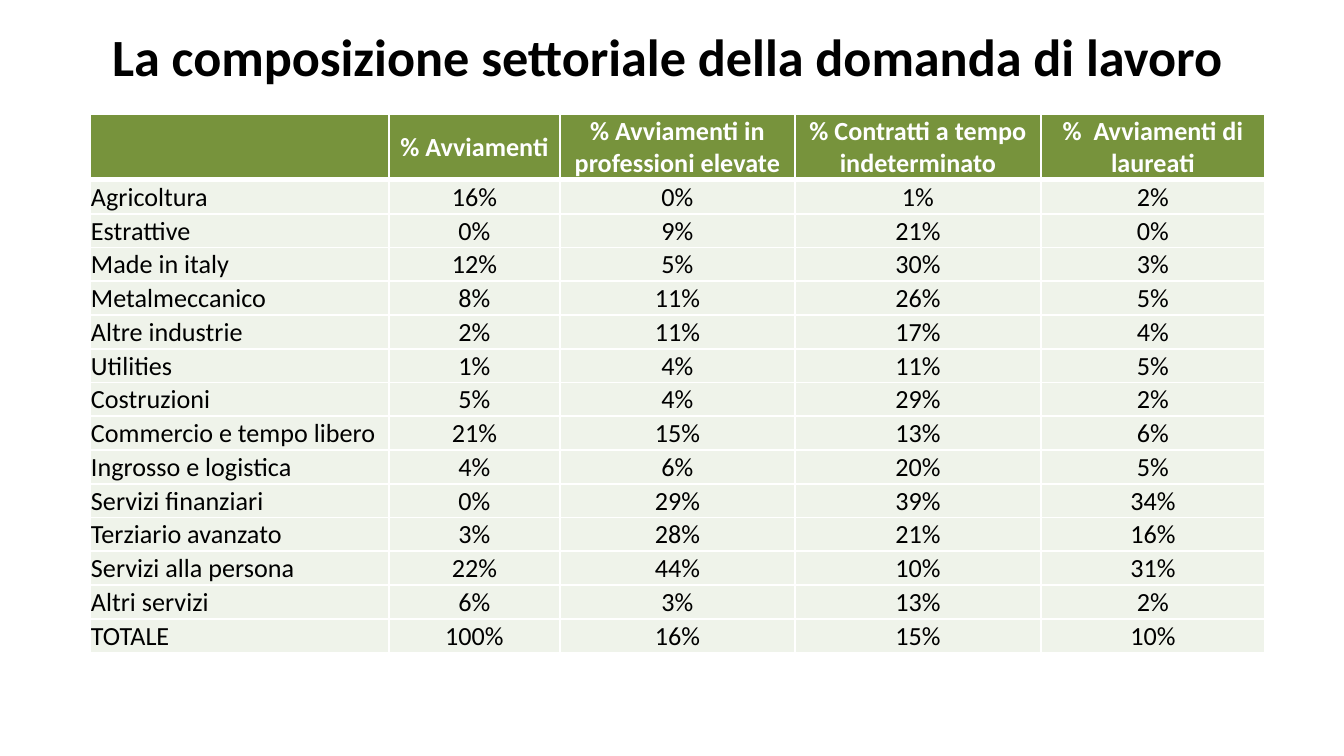
"""Build the slide on the sector composition of labour demand."""
from lxml import etree
from pptx import Presentation
from pptx.dml.color import RGBColor
from pptx.enum.text import MSO_ANCHOR, PP_ALIGN
from pptx.oxml.ns import qn
from pptx.util import Emu, Pt

MIDDLE = MSO_ANCHOR.MIDDLE
LEFT, CENTER = PP_ALIGN.LEFT, PP_ALIGN.CENTER
BLACK = RGBColor(0x00, 0x00, 0x00)
WHITE = RGBColor(0xFF, 0xFF, 0xFF)
GREEN = RGBColor(0x77, 0x93, 0x3C)
PALE_GREEN = RGBColor(0xEF, 0xF3, 0xEA)
PX_PER_INCH = 134.4

COLUMN_WIDTHS = [299, 171, 235, 246, 224]
HEADER_HEIGHT, BODY_HEIGHT = 66, 473
HEADERS = [
    "",
    "% Avviamenti",
    "% Avviamenti in professioni elevate",
    "% Contratti a tempo indeterminato",
    "%  Avviamenti di laureati",
]
SECTORS = [
    ("Agricoltura", 16, 0, 1, 2),
    ("Estrattive", 0, 9, 21, 0),
    ("Made in italy", 12, 5, 30, 3),
    ("Metalmeccanico", 8, 11, 26, 5),
    ("Altre industrie", 2, 11, 17, 4),
    ("Utilities", 1, 4, 11, 5),
    ("Costruzioni", 5, 4, 29, 2),
    ("Commercio e tempo libero", 21, 15, 13, 6),
    ("Ingrosso e logistica", 4, 6, 20, 5),
    ("Servizi finanziari", 0, 29, 39, 34),
    ("Terziario avanzato", 3, 28, 21, 16),
    ("Servizi alla persona", 22, 44, 10, 31),
    ("Altri servizi", 6, 3, 13, 2),
    ("TOTALE", 100, 16, 15, 10),
]


def px(length):
    return Emu(round(length * 914400 / PX_PER_INCH))


class SlideBuilder:
    def __init__(self, page, font_name="Calibri"):
        self.page = page
        self.font_name = font_name

    def paragraph(self, para, text, size, color, bold, align):
        para.text = text
        para.alignment = align
        font = para.font
        font.name, font.size, font.bold = self.font_name, Pt(size), bold
        font.color.rgb = color

    def title(self, text, left, top, width, height):
        box = self.page.shapes.add_textbox(px(left), px(top), px(width), px(height))
        frame = box.text_frame
        frame.word_wrap = True
        frame.vertical_anchor = MIDDLE
        self.paragraph(frame.paragraphs[0], text, 28, BLACK, True, CENTER)

    def border(self, cell, side, points):
        properties = cell._tc.get_or_add_tcPr()
        line = etree.SubElement(properties, qn(f"a:ln{side}"), w=str(Pt(points)))
        fill = etree.SubElement(line, qn("a:solidFill"))
        etree.SubElement(fill, qn("a:srgbClr"), val=str(WHITE))

    def cell(self, cell, text, row, column):
        is_header = row == 0
        weights = {"L": 1, "R": 1, "T": 3 if row == 1 else 1, "B": 3 if is_header else 1}
        for side, points in weights.items():
            self.border(cell, side, points)
        cell.fill.solid()
        cell.fill.fore_color.rgb = GREEN if is_header else PALE_GREEN
        cell.margin_left = cell.margin_right = cell.margin_top = px(1)
        cell.margin_bottom = 0
        cell.vertical_anchor = MIDDLE
        align = CENTER if is_header or column else LEFT
        color = WHITE if is_header else BLACK
        self.paragraph(cell.text_frame.paragraphs[0], text, 14, color, is_header, align)

    def table(self, rows, left, top, widths, heights):
        frame = self.page.shapes.add_table(
            len(rows), len(widths), px(left), px(top), px(sum(widths)), px(sum(heights))
        )
        table = frame.table
        for column, width in zip(table.columns, widths):
            column.width = px(width)
        for row, height in zip(table.rows, heights):
            row.height = px(height)
        for row, texts in enumerate(rows):
            for column, text in enumerate(texts):
                self.cell(table.cell(row, column), text, row, column)


def main():
    deck = Presentation()
    deck.slide_width, deck.slide_height = px(1344), px(756)
    builder = SlideBuilder(deck.slides.add_slide(deck.slide_layouts[6]))
    builder.title("La composizione settoriale della domanda di lavoro", 16, 19, 1302, 73)
    body = [[name, *(f"{share}%" for share in shares)] for name, *shares in SECTORS]
    heights = [HEADER_HEIGHT] + [BODY_HEIGHT / len(body)] * len(body)
    builder.table([HEADERS, *body], 90, 114, COLUMN_WIDTHS, heights)
    deck.save("out.pptx")


if __name__ == "__main__":
    main()
